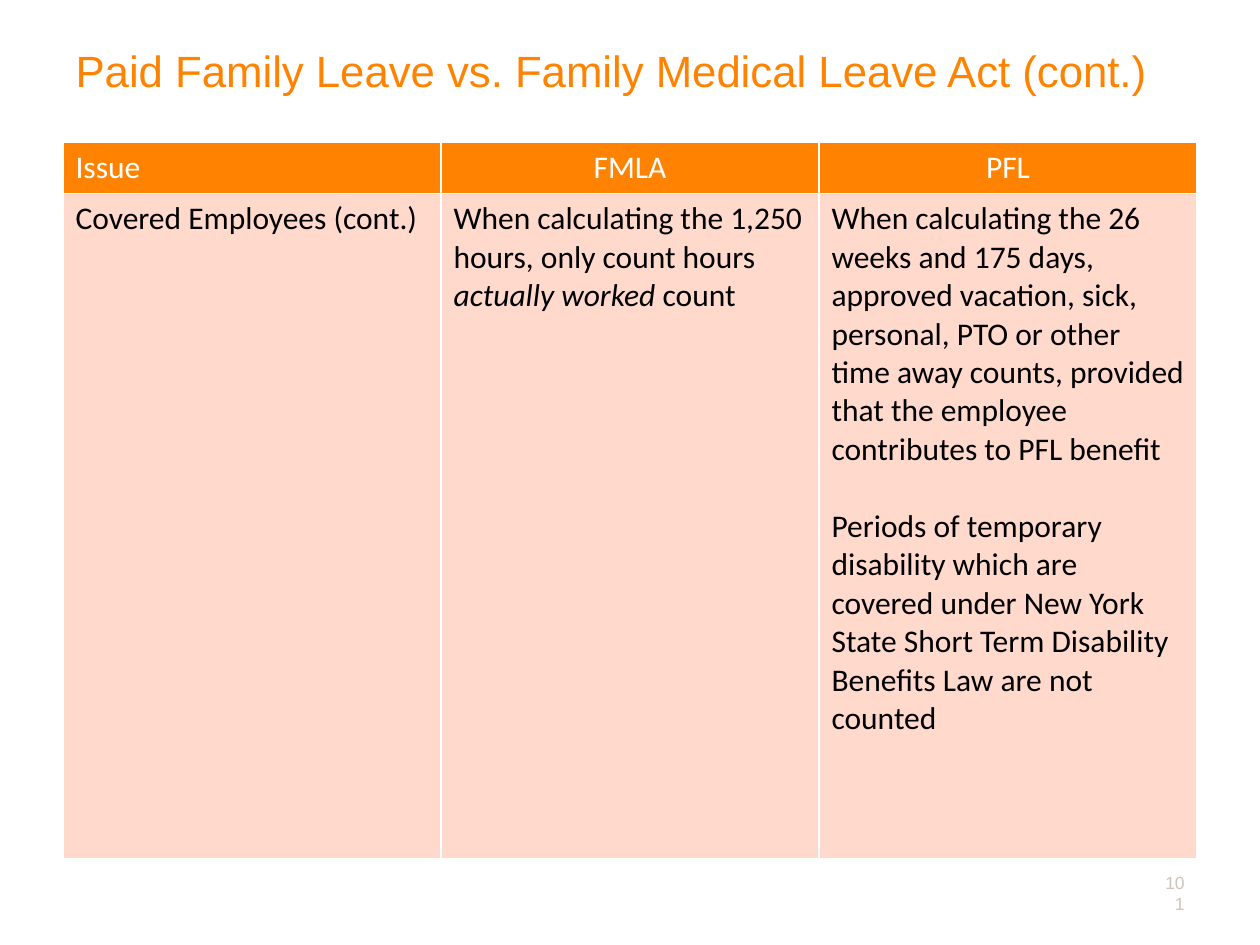
from lxml import etree
from pptx import Presentation
from pptx.dml.color import RGBColor
from pptx.enum.text import MSO_ANCHOR, PP_ALIGN
from pptx.oxml.ns import qn
from pptx.util import Inches, Pt

TOP, MIDDLE = MSO_ANCHOR.TOP, MSO_ANCHOR.MIDDLE
LEFT, CENTER, RIGHT = PP_ALIGN.LEFT, PP_ALIGN.CENTER, PP_ALIGN.RIGHT
WIDTH, HEIGHT = Inches(10), Inches(7.5)
MARGIN = 0.05
ORANGE, PEACH, WHITE, BLACK, GREY = "FF8300", "FFD9CC", "FFFFFF", "000000", "CDC3BB"
HEADINGS = ["Issue", "FMLA", "PFL"]
HEADER_HEIGHT, BODY_HEIGHT = Inches(0.41), Inches(5.28)
COMPARISON = [
    [[("Covered Employees (cont.)", False)]],
    [[("When calculating the 1,250 hours, only count hours ", False),
      ("actually worked ", True), ("count", False)]],
    [[("When calculating the 26 weeks and 175 days, approved vacation, sick, "
       "personal, PTO or other time away counts, provided that the employee "
       "contributes to PFL benefit", False)],
     [("Periods of temporary disability which are covered under New York State "
       "Short Term Disability Benefits Law are not counted", False)]],
]


def share(left, top, width, height):
    """Turn shares of the slide's size into a box of lengths."""
    return (int(left * WIDTH), int(top * HEIGHT),
            int(width * WIDTH), int(height * HEIGHT))


def style(paragraph, font, size, color, align=LEFT):
    """Format a whole paragraph."""
    paragraph.alignment = align
    paragraph.font.name = font
    paragraph.font.size = Pt(size)
    paragraph.font.bold = False
    paragraph.font.color.rgb = RGBColor.from_string(color)


def add_title(slide, box, wording):
    """Place and format the title placeholder."""
    title = slide.shapes.title
    title.left, title.top, title.width, title.height = box
    title.text_frame.text = wording
    title.text_frame.vertical_anchor = TOP
    style(title.text_frame.paragraphs[0], "Arial", 25, ORANGE)


def border(cell, color):
    """Draw a one-point line on every side of a cell."""
    properties = cell._tc.get_or_add_tcPr()
    for position, side in enumerate(("a:lnL", "a:lnR", "a:lnT", "a:lnB")):
        line = etree.Element(qn(side), w=str(Pt(1)))
        solid = etree.SubElement(line, qn("a:solidFill"))
        etree.SubElement(solid, qn("a:srgbClr"), val=color)
        properties.insert(position, line)


def fill_cell(cell, paragraphs, background, color, align=LEFT):
    """Write paragraphs of (wording, italic) runs into a bordered cell."""
    cell.fill.solid()
    cell.fill.fore_color.rgb = RGBColor.from_string(background)
    border(cell, WHITE)
    for index, runs in enumerate(paragraphs):
        frame = cell.text_frame
        paragraph = frame.add_paragraph() if index else frame.paragraphs[0]
        style(paragraph, "Calibri", 18, color, align)
        if index:
            paragraph.space_before = Pt(22)
        for wording, italic in runs:
            run = paragraph.add_run()
            run.text = wording
            if italic:
                run.font.italic = True


def add_comparison(slide, box):
    """Add the table that compares the two leave laws."""
    table = slide.shapes.add_table(2, len(HEADINGS), *box).table
    table.rows[0].height, table.rows[1].height = HEADER_HEIGHT, BODY_HEIGHT
    for column, (heading, body) in enumerate(zip(HEADINGS, COMPARISON)):
        fill_cell(table.cell(0, column), [[(heading, False)]], ORANGE, WHITE,
                  CENTER if column else LEFT)
        fill_cell(table.cell(1, column), body, PEACH, BLACK)


def add_page_number(slide, box, number):
    """Add the page number at the lower right."""
    frame = slide.shapes.add_textbox(*box).text_frame
    frame.word_wrap = True
    frame.vertical_anchor = MIDDLE
    frame.text = number
    style(frame.paragraphs[0], "Arial", 10, GREY, RIGHT)


def main():
    """Build and save the slide."""
    deck = Presentation()
    deck.slide_width, deck.slide_height = WIDTH, HEIGHT
    slide = deck.slides.add_slide(deck.slide_layouts[5])
    content = 1 - 2 * MARGIN
    add_title(slide, share(MARGIN, 0.04, content, 0.17),
              "Paid Family Leave vs. Family Medical Leave Act (cont.)")
    add_comparison(slide, share(MARGIN, 0.15, content, 0.76))
    add_page_number(slide, share(0.91, 0.92, 0.04, 0.05), "101")
    deck.save("out.pptx")


if __name__ == "__main__":
    main()
